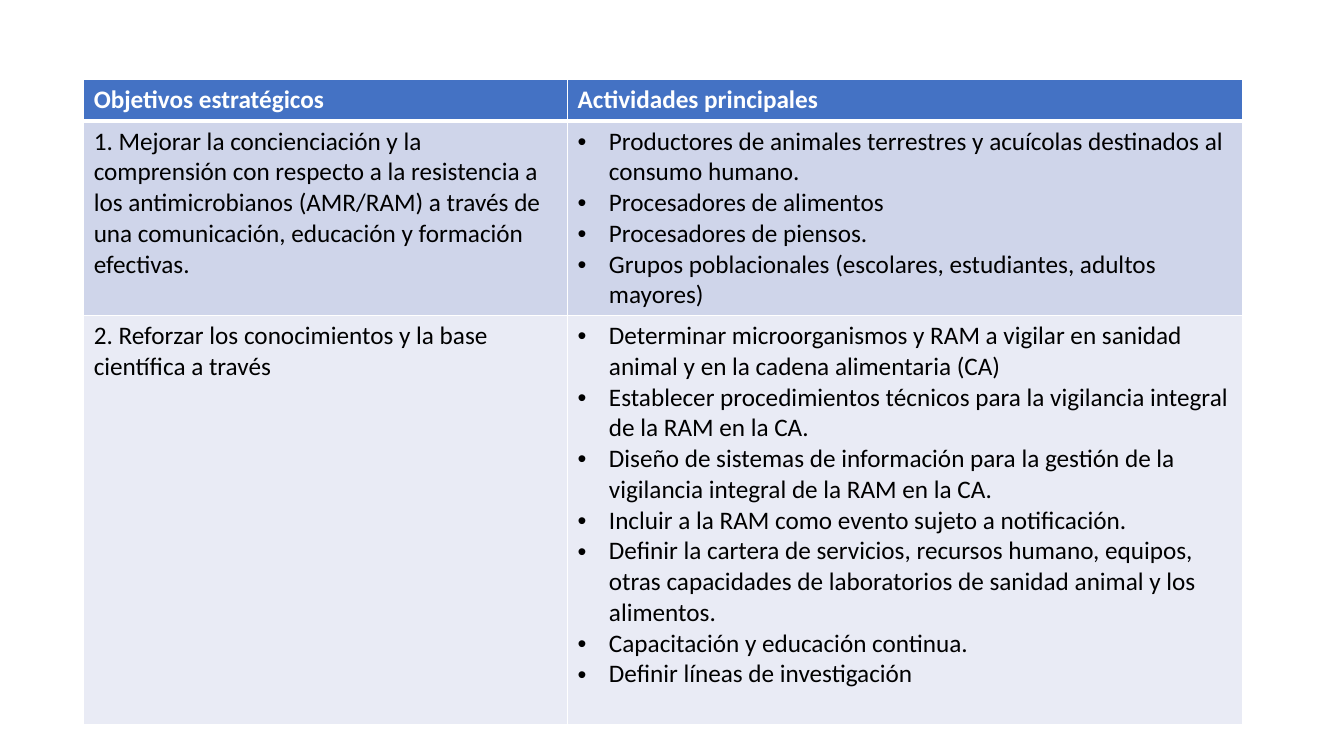
from dataclasses import dataclass

from lxml import etree
from pptx import Presentation
from pptx import util as u
from pptx.dml.color import RGBColor
from pptx.oxml import ns


@dataclass(frozen=True)
class Theme:
    font: str = "Calibri"
    size: int = 18
    header_fill: str = "4472C4"
    header_text: str = "FFFFFF"
    body_text: str = "000000"
    band_fills: tuple = ("CFD5EA", "E9EBF5")
    border: str = "FFFFFF"
    thin: int = 1
    thick: int = 3


THEME = Theme()
COLUMN_WIDTHS = (4.8, 6.69)
ROW_HEIGHTS = (0.41, 1.92, 4.06)
HEADERS = ("Objetivos estratégicos", "Actividades principales")
OBJECTIVES = (
    (
        "1. Mejorar la concienciación y la comprensión con respecto a la "
        "resistencia a los antimicrobianos (AMR/RAM) a través de una "
        "comunicación, educación y formación efectivas.",
        (
            "Productores de animales terrestres y acuícolas destinados al consumo humano.",
            "Procesadores de alimentos",
            "Procesadores de piensos.",
            "Grupos poblacionales (escolares, estudiantes, adultos mayores)",
        ),
    ),
    (
        "2. Reforzar los conocimientos y la base científica a través",
        (
            "Determinar microorganismos y RAM a vigilar en sanidad animal y en "
            "la cadena alimentaria (CA)",
            "Establecer procedimientos técnicos para la vigilancia integral de la RAM en la CA.",
            "Diseño de sistemas de información para la gestión de la vigilancia "
            "integral de la RAM en la CA.",
            "Incluir a la RAM como evento sujeto a notificación.",
            "Definir la cartera de servicios, recursos humano, equipos, otras "
            "capacidades de laboratorios de sanidad animal y los alimentos.",
            "Capacitación y educación continua.",
            "Definir líneas de investigación",
        ),
    ),
)


def set_borders(cell, top, bottom):
    """Draw all four cell edges; top and bottom are widths in points."""
    properties = cell._tc.get_or_add_tcPr()
    widths = {"L": THEME.thin, "R": THEME.thin, "T": top, "B": bottom}
    for side, width in widths.items():
        line = etree.SubElement(properties, ns.qn(f"a:ln{side}"), w=str(u.Pt(width)))
        fill = etree.SubElement(line, ns.qn("a:solidFill"))
        etree.SubElement(fill, ns.qn("a:srgbClr"), val=THEME.border)


def add_bullet(para):
    indent = u.Inches(0.31)
    properties = para._p.get_or_add_pPr()
    properties.set("marL", str(indent))
    properties.set("indent", str(-indent))
    etree.SubElement(properties, ns.qn("a:buFont"), typeface="Arial")
    etree.SubElement(properties, ns.qn("a:buChar"), char="•")


def fill_cell(cell, lines, fill, color, bold=False, bulleted=False):
    cell.fill.solid()
    cell.fill.fore_color.rgb = RGBColor.from_string(fill)
    cell.text_frame.text = "\n".join(lines)
    for para in cell.text_frame.paragraphs:
        if bulleted:
            add_bullet(para)
        for span in para.runs:
            span.font.name = THEME.font
            span.font.size = u.Pt(THEME.size)
            span.font.bold = bold
            span.font.color.rgb = RGBColor.from_string(color)


def add_objectives_table(page):
    frame = page.shapes.add_table(
        len(ROW_HEIGHTS), len(COLUMN_WIDTHS), u.Inches(0.83), u.Inches(0.79),
        u.Inches(sum(COLUMN_WIDTHS)), u.Inches(sum(ROW_HEIGHTS)),
    )
    table = frame.table
    for column, width in zip(table.columns, COLUMN_WIDTHS):
        column.width = u.Inches(width)
    for index, (row, height) in enumerate(zip(table.rows, ROW_HEIGHTS)):
        row.height = u.Inches(height)
        for cell in row.cells:
            set_borders(
                cell,
                top=THEME.thick if index == 1 else THEME.thin,
                bottom=THEME.thick if index == 0 else THEME.thin,
            )
    for cell, header in zip(table.rows[0].cells, HEADERS):
        fill_cell(cell, [header], THEME.header_fill, THEME.header_text, bold=True)
    bands = zip(OBJECTIVES, THEME.band_fills)
    for index, ((objective, activities), fill) in enumerate(bands, start=1):
        fill_cell(table.cell(index, 0), [objective], fill, THEME.body_text)
        fill_cell(table.cell(index, 1), activities, fill, THEME.body_text, bulleted=True)


def main():
    deck = Presentation()
    deck.slide_width = u.Inches(13.33)
    deck.slide_height = u.Inches(7.5)
    page = deck.slides.add_slide(deck.slide_layouts[6])
    add_objectives_table(page)
    deck.save("out.pptx")


if __name__ == "__main__":
    main()
